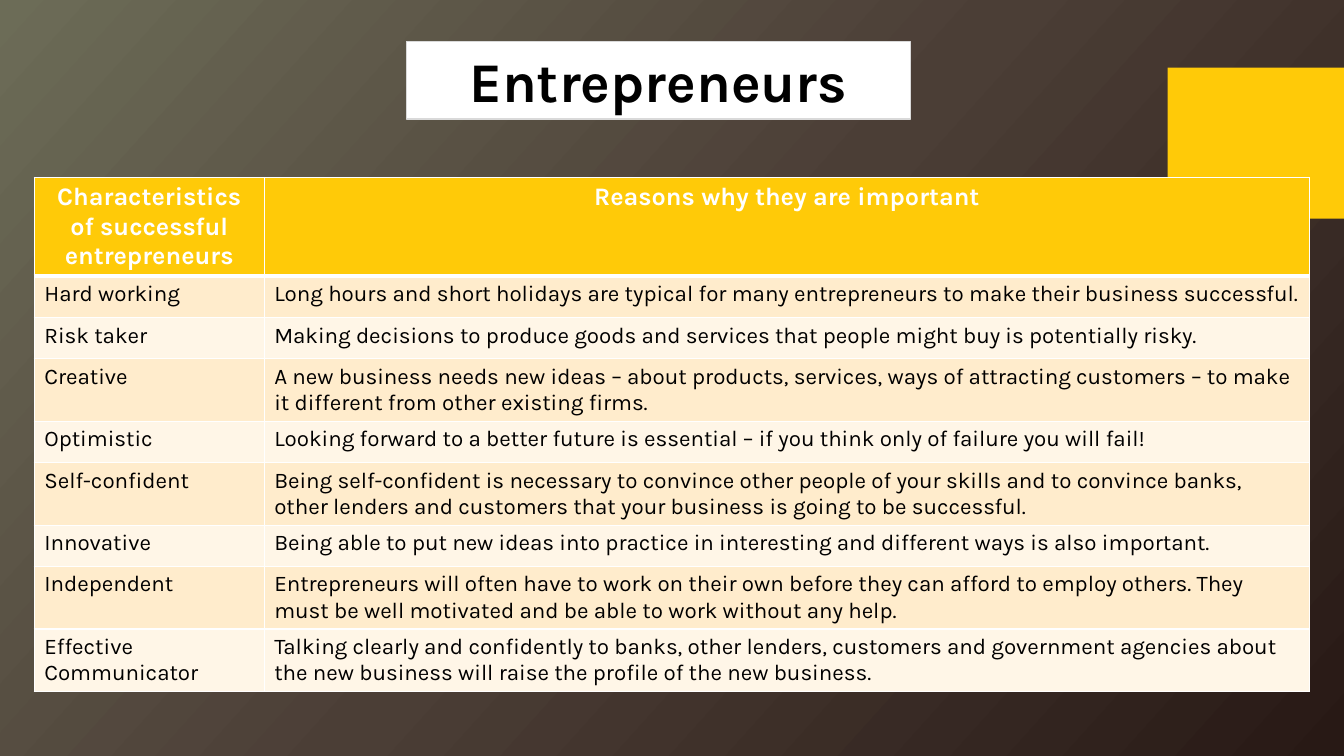
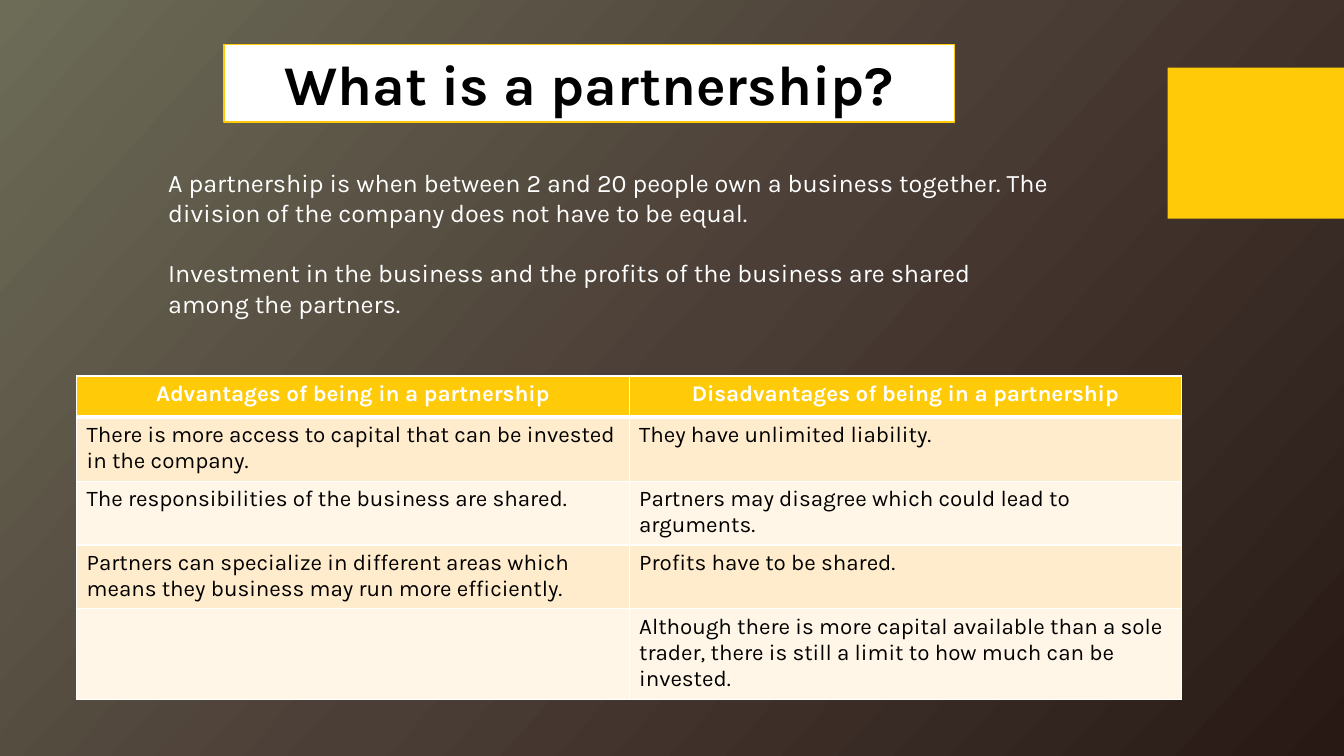
from lxml import etree
from pptx import Presentation
from pptx.dml.color import RGBColor
from pptx.enum import shapes, text
from pptx.oxml import ns
from pptx.util import Inches, Pt

FONT = "Karla"
COLORS = {
    "gold": "FFCA08",
    "white": "FFFFFF",
    "black": "000000",
    "grey": "D9D9D9",
    "band_dark": "FFECCC",
    "band_light": "FFF6E7",
}
BACKGROUND_STOPS = [(0, "6C6C57"), (50, "4B3E36"), (100, "281915")]
BACKGROUND_ANGLE = 42
ROW_HEIGHT = 0.41

CHARACTERISTICS = [
    ("Characteristics of successful entrepreneurs", "Reasons why they are important"),
    ("Hard working",
     "Long hours and short holidays are typical for many entrepreneurs to make their "
     "business successful."),
    ("Risk taker",
     "Making decisions to produce goods and services that people might buy is "
     "potentially risky."),
    ("Creative",
     "A new business needs new ideas – about products, services, ways of attracting "
     "customers – to make it different from other existing firms."),
    ("Optimistic",
     "Looking forward to a better future is essential – if you think only of failure "
     "you will fail!"),
    ("Self-confident",
     "Being self-confident is necessary to convince other people of your skills and to "
     "convince banks, other lenders and customers that your business is going to be "
     "successful."),
    ("Innovative",
     "Being able to put new ideas into practice in interesting and different ways is "
     "also important."),
    ("Independent",
     "Entrepreneurs will often have to work on their own before they can afford to "
     "employ others. They must be well motivated and be able to work without any help."),
    ("Effective Communicator",
     "Talking clearly and confidently to banks, other lenders, customers and government "
     "agencies about the new business will raise the profile of the new business."),
]

PARTNERSHIP_DEFINITION = [
    "A partnership is when between 2 and 20 people own a business together. The division "
    "of the company does not have to be equal.",
    "Investment in the business and the profits of the business are shared among the "
    "partners.",
]

PARTNERSHIP_BALANCE = [
    ("Advantages of being in a partnership", "Disadvantages of being in a partnership"),
    ("There is more access to capital that can be invested in the company.",
     "They have unlimited liability."),
    ("The responsibilities of the business are shared.",
     "Partners may disagree which could lead to arguments."),
    ("Partners can specialize in different areas which means they business may run more "
     "efficiently.",
     "Profits have to be shared."),
    ("",
     "Although there is more capital available than a sole trader, there is still a limit "
     "to how much can be invested."),
]


def rgb(name):
    return RGBColor.from_string(COLORS[name])


def format_paragraph(paragraph, size, color, bold=False, align=text.PP_ALIGN.LEFT):
    paragraph.alignment = align
    for run in paragraph.runs:
        run.font.name = FONT
        run.font.size = Pt(size)
        run.font.bold = bold
        run.font.color.rgb = rgb(color)


# Shared look
def set_background(master):
    fill = master.background.fill
    fill.gradient()
    fill.gradient_angle = 360 - BACKGROUND_ANGLE
    stops = master.element.find(".//" + ns.qn("a:gsLst"))
    for stop in list(stops):
        stops.remove(stop)
    for position, color in BACKGROUND_STOPS:
        stop = etree.SubElement(stops, ns.qn("a:gs"), pos=str(position * 1000))
        etree.SubElement(stop, ns.qn("a:srgbClr"), val=color)


def add_titled_slide(presentation, title, box, line_color):
    slide = presentation.slides.add_slide(presentation.slide_layouts[5])

    # Corner block
    block = slide.shapes.add_shape(
        shapes.MSO_SHAPE.RECTANGLE,
        Inches(11.58), Inches(0.67), Inches(1.75), Inches(1.5))
    block.shadow.inherit = False
    block.fill.solid()
    block.fill.fore_color.rgb = rgb("gold")
    block.line.fill.background()

    # Title box
    shape = slide.shapes.title
    shape.left, shape.top, shape.width, shape.height = map(Inches, box)
    shape.fill.solid()
    shape.fill.fore_color.rgb = rgb("white")
    shape.line.color.rgb = rgb(line_color)
    shape.line.width = Pt(1)
    frame = shape.text_frame
    frame.text = title
    frame.auto_size = text.MSO_AUTO_SIZE.NONE
    frame.vertical_anchor = text.MSO_ANCHOR.MIDDLE
    format_paragraph(frame.paragraphs[0], 40, "black", True, text.PP_ALIGN.CENTER)
    return slide


def set_borders(cell, top, bottom):
    properties = cell._tc.get_or_add_tcPr()
    for side, width in (("L", 1), ("R", 1), ("T", top), ("B", bottom)):
        line = etree.SubElement(properties, ns.qn("a:ln" + side), w=str(Pt(width)))
        fill = etree.SubElement(line, ns.qn("a:solidFill"))
        etree.SubElement(fill, ns.qn("a:srgbClr"), val=COLORS["white"])


def add_banded_table(slide, left, top, widths, rows, header_size):
    table = slide.shapes.add_table(
        len(rows), len(widths), Inches(left), Inches(top),
        Inches(sum(widths)), Inches(ROW_HEIGHT * len(rows))).table
    for column, width in zip(table.columns, widths):
        column.width = Inches(width)
    for row_index, row in enumerate(rows):
        header = row_index == 0
        band = "band_dark" if row_index % 2 else "band_light"
        for column_index, content in enumerate(row):
            cell = table.cell(row_index, column_index)
            set_borders(cell, 3 if row_index == 1 else 1, 3 if header else 1)
            cell.fill.solid()
            cell.fill.fore_color.rgb = rgb("gold" if header else band)
            cell.text_frame.text = content
            paragraph = cell.text_frame.paragraphs[0]
            if header:
                format_paragraph(paragraph, header_size, "white", True,
                                 text.PP_ALIGN.CENTER)
            else:
                format_paragraph(paragraph, 16, "black")


def add_body_text(slide, box, paragraphs):
    frame = slide.shapes.add_textbox(*map(Inches, box)).text_frame
    frame.word_wrap = True
    for index, content in enumerate(paragraphs):
        paragraph = frame.add_paragraph() if index else frame.paragraphs[0]
        paragraph.text = content
        format_paragraph(paragraph, 18, "white")
        if index:
            paragraph.space_before = Pt(21.5)


# Slides
def build_entrepreneurs(presentation):
    slide = add_titled_slide(presentation, "Entrepreneurs", (4.03, 0.41, 5, 0.77), "grey")
    add_banded_table(slide, 0.34, 1.76, (2.28, 10.37), CHARACTERISTICS, 18)


def build_partnership(presentation):
    slide = add_titled_slide(
        presentation, "What is a partnership?", (2.22, 0.44, 7.25, 0.77), "gold")
    add_body_text(slide, (1.57, 1.61, 8.94, 1.62), PARTNERSHIP_DEFINITION)
    add_banded_table(slide, 0.76, 3.73, (5.48, 5.48), PARTNERSHIP_BALANCE, 16)


def main():
    presentation = Presentation()
    presentation.slide_width = Inches(13.33)
    presentation.slide_height = Inches(7.5)
    set_background(presentation.slide_master)
    build_entrepreneurs(presentation)
    build_partnership(presentation)
    presentation.save("out.pptx")


if __name__ == "__main__":
    main()
